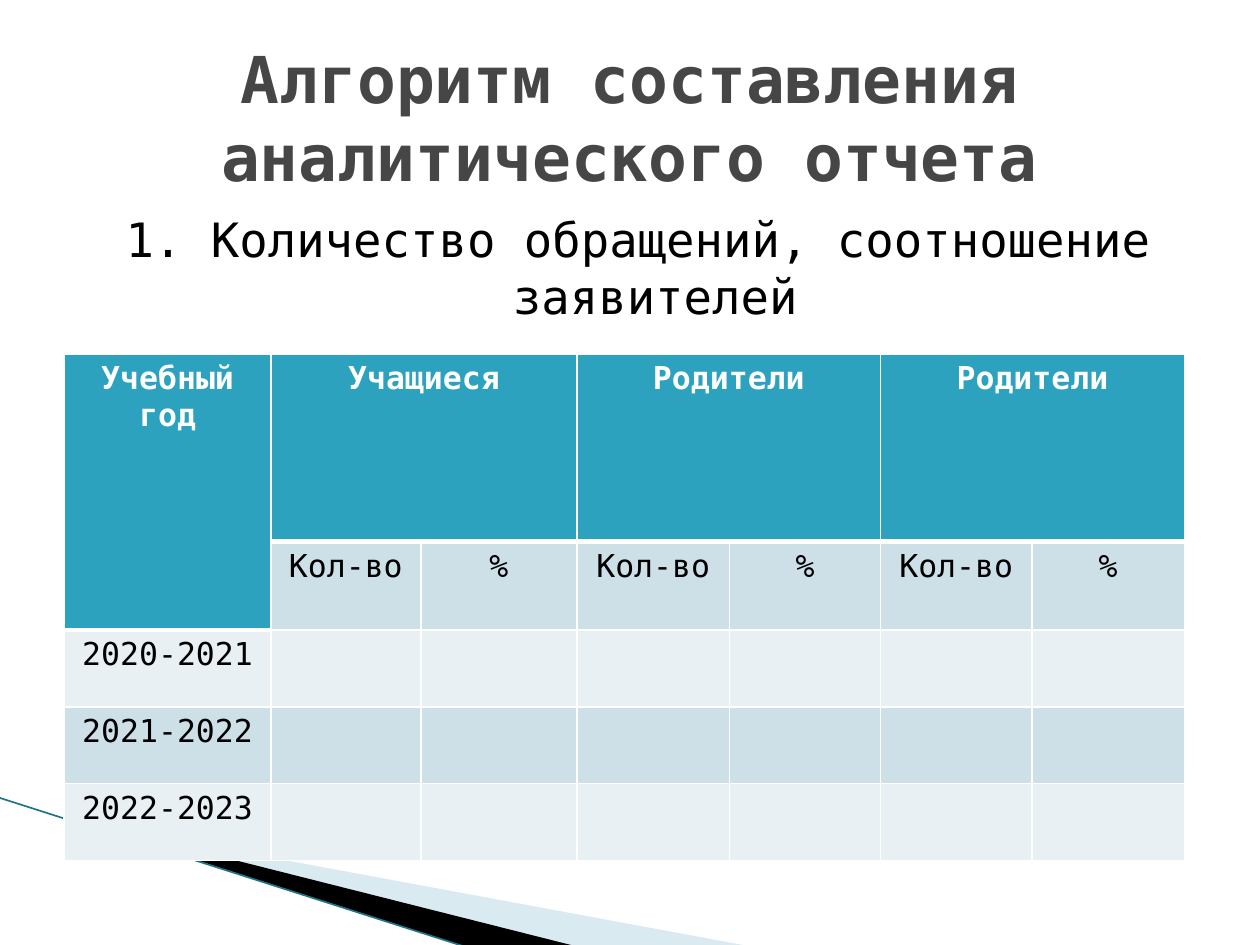
import pptx
import pptx.util
import pptx.dml.color
import pptx.enum.text
import pptx.oxml
import pptx.oxml.ns
import lxml.etree
from dataclasses import dataclass

Inches = pptx.util.Inches


@dataclass(frozen=True)
class Theme:
    font: str = "DejaVu Sans Mono"
    title_size: float = 36.9
    body_size: float = 27
    table_size: float = 18
    title: str = "464646"
    text: str = "000000"
    white: str = "FFFFFF"
    header: str = "2DA2BF"
    dark_band: str = "CDE0E8"
    light_band: str = "E8F0F4"
    wedge: str = "A0CBDC"
    stripe: str = "000000"
    edge: str = "1F7489"


THEME = Theme()

TITLE = "Алгоритм составления аналитического отчета"
SUBTITLE = "1. Количество обращений, соотношение заявителей"
YEAR_HEADING = "Учебный год"
GROUPS = ["Учащиеся", "Родители", "Родители"]
MEASURES = ["Кол-во", "%"]
YEARS = ["2020-2021", "2021-2022", "2022-2023"]

COLUMN_WIDTHS = [1.64, 1.19, 1.24, 1.21, 1.2, 1.2, 1.21]
ROW_HEIGHTS = [1.49, 0.68] + [0.61] * len(YEARS)
WEDGES = [
    ([(0.55, 6.51), (5.95, 7.51), (4.56, 7.51), (0.55, 6.5)], THEME.wedge, 40),
    ([(0.53, 6.49), (4.57, 7.51), (3.72, 7.52), (0.54, 6.5)], THEME.stripe, 100),
]


def rgb(value):
    return pptx.dml.color.RGBColor.from_string(value)


def write_text(frame, text, size=THEME.table_size, color=THEME.text, bold=False,
               margin=0, indent=0):
    para = frame.paragraphs[0]
    para.alignment = pptx.enum.text.PP_ALIGN.CENTER
    if indent:
        properties = para._p.get_or_add_pPr()
        properties.set("marL", str(Inches(margin)))
        properties.set("indent", str(Inches(indent)))
    span = para.add_run()
    span.text = text
    span.font.name = THEME.font
    span.font.size = pptx.util.Pt(size)
    span.font.bold = bold
    span.font.color.rgb = rgb(color)


def add_text_box(page, left, top, width, height, anchor):
    box = page.shapes.add_textbox(*map(Inches, (left, top, width, height)))
    box.text_frame.word_wrap = True
    box.text_frame.vertical_anchor = anchor
    return box.text_frame


def add_wedge(page, points, color, opacity):
    corners = [(Inches(x), Inches(y)) for x, y in points]
    builder = page.shapes.build_freeform(*corners[0], scale=1.0)
    builder.add_line_segments(corners[1:], close=True)
    wedge = builder.convert_to_shape()
    wedge.shadow.inherit = False
    wedge.line.fill.background()
    wedge.fill.solid()
    wedge.fill.fore_color.rgb = rgb(color)
    if opacity < 100:
        tint = wedge._element.spPr.find(".//" + pptx.oxml.ns.qn("a:srgbClr"))
        alpha = lxml.etree.SubElement(tint, pptx.oxml.ns.qn("a:alpha"))
        alpha.set("val", str(opacity * 1000))


def add_edge(page):
    edge = page.shapes.add_connector(
        pptx.enum.shapes.MSO_CONNECTOR.STRAIGHT,
        *map(Inches, (-0.01, 6.33, 3.71, 7.52)))
    edge.line.color.rgb = rgb(THEME.edge)
    edge.line.width = pptx.util.Pt(0.95)
    lxml.etree.SubElement(edge._element.spPr, pptx.oxml.ns.qn("a:effectLst"))


def style_cell(cell, fill, borders):
    properties = cell._tc.get_or_add_tcPr()
    for side, width in borders.items():
        properties.append(pptx.oxml.parse_xml(
            f'<a:ln{side} {pptx.oxml.ns.nsdecls("a")} w="{pptx.util.Pt(width)}">'
            f'<a:solidFill><a:srgbClr val="{THEME.white}"/></a:solidFill></a:ln{side}>'))
    cell.fill.solid()
    cell.fill.fore_color.rgb = rgb(fill)


def add_report_table(page):
    frame = page.shapes.add_table(
        len(ROW_HEIGHTS), len(COLUMN_WIDTHS), Inches(0.51), Inches(2.81),
        Inches(sum(COLUMN_WIDTHS)), Inches(sum(ROW_HEIGHTS)))
    table = frame.table
    table.first_row = table.horz_banding = False
    for column, width in zip(table.columns, COLUMN_WIDTHS):
        column.width = Inches(width)
    for row, height in zip(table.rows, ROW_HEIGHTS):
        row.height = Inches(height)

    for row in range(len(ROW_HEIGHTS)):
        for column in range(len(COLUMN_WIDTHS)):
            heading = row == 0 or (row == 1 and column == 0)
            band = THEME.dark_band if row % 2 else THEME.light_band
            borders = {"L": 1, "R": 1}
            if row == 0:
                borders["T"] = 1
            borders["B"] = 3 if heading else 1
            style_cell(table.cell(row, column), THEME.header if heading else band, borders)

    heading_format = {"color": THEME.white, "bold": True}
    table.cell(0, 0).merge(table.cell(1, 0))
    write_text(table.cell(0, 0).text_frame, YEAR_HEADING, **heading_format)
    for group, name in enumerate(GROUPS):
        first = 1 + group * len(MEASURES)
        table.cell(0, first).merge(table.cell(0, first + len(MEASURES) - 1))
        write_text(table.cell(0, first).text_frame, name, **heading_format)
        for offset, measure in enumerate(MEASURES):
            write_text(table.cell(1, first + offset).text_frame, measure)
    for row, year in enumerate(YEARS, start=2):
        write_text(table.cell(row, 0).text_frame, year)


def main():
    deck = pptx.Presentation()
    deck.slide_width, deck.slide_height = Inches(10), Inches(7.5)
    page = deck.slides.add_slide(deck.slide_layouts[6])
    page.background.fill.solid()
    page.background.fill.fore_color.rgb = rgb(THEME.white)

    for points, color, opacity in WEDGES:
        add_wedge(page, points, color, opacity)
    add_edge(page)

    anchors = pptx.enum.text.MSO_ANCHOR
    subtitle = add_text_box(page, 0.5, 1.62, 9, 4.95, anchors.TOP)
    write_text(subtitle, SUBTITLE, size=THEME.body_size, margin=0.4, indent=-0.28)
    title = add_text_box(page, 0.5, 0.3, 9, 1.25, anchors.MIDDLE)
    write_text(title, TITLE, size=THEME.title_size, color=THEME.title, bold=True)
    add_report_table(page)
    deck.save("out.pptx")


if __name__ == "__main__":
    main()
